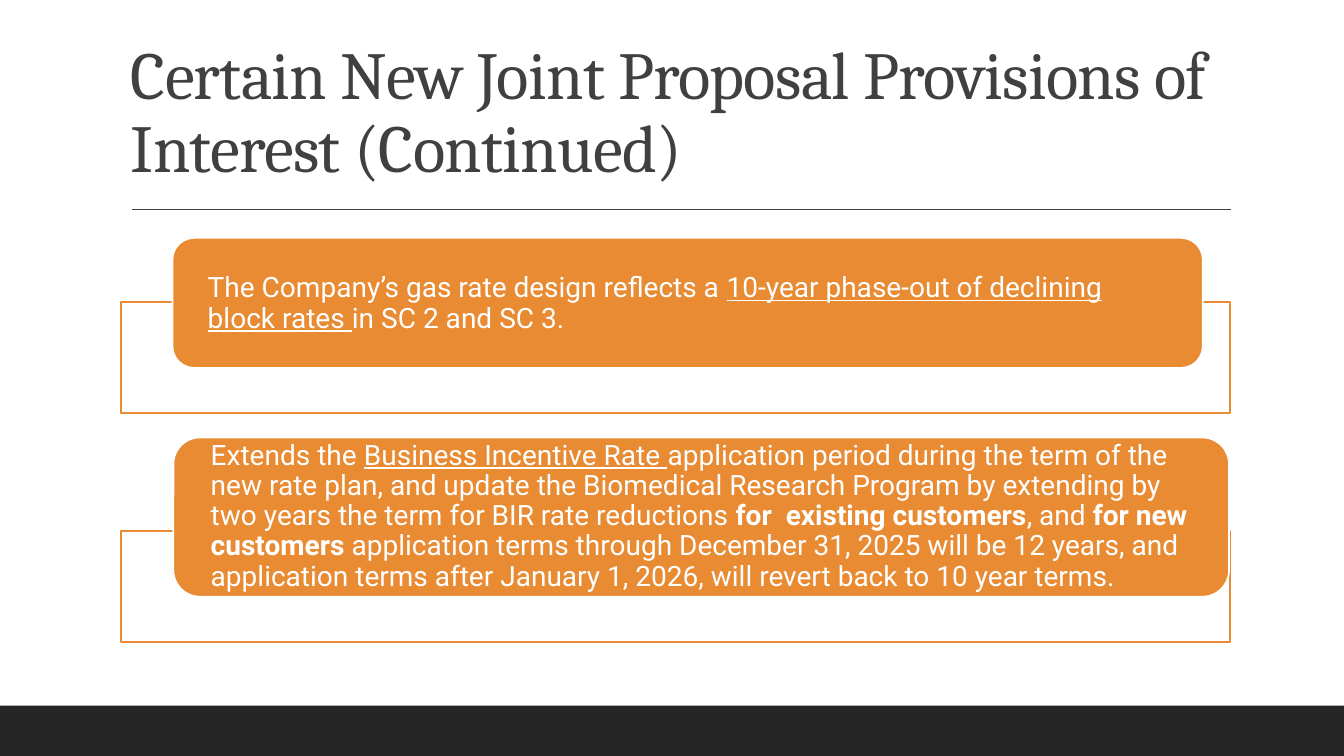
from dataclasses import dataclass

from lxml.etree import SubElement
from pptx import Presentation
from pptx.dml.color import RGBColor
from pptx.enum.shapes import MSO_CONNECTOR, MSO_SHAPE
from pptx.enum.text import MSO_ANCHOR
from pptx.oxml.ns import qn
from pptx.shapes.autoshape import Shape
from pptx.slide import Slide
from pptx.util import Inches, Pt

WHITE = RGBColor(0xFF, 0xFF, 0xFF)
ORANGE = RGBColor(0xE8, 0x8B, 0x33)
GRAY = RGBColor(0x40, 0x40, 0x40)
CHARCOAL = RGBColor(0x26, 0x26, 0x26)
TITLE_FONT = "Cambria"
BODY_FONT = "Roboto"
FRAME_LEFT, FRAME_WIDTH, FRAME_HEIGHT = 1.2, 11, 1.1


@dataclass(frozen=True)
class Box:
    left: float
    top: float
    width: float
    height: float

    def lengths(self) -> tuple[Inches, ...]:
        return tuple(Inches(value) for value in (self.left, self.top, self.width, self.height))


@dataclass(frozen=True)
class Phrase:
    text: str
    underline: bool = False
    bold: bool = False


@dataclass(frozen=True)
class Provision:
    frame_top: float
    card: Box
    text_box: Box
    phrases: tuple[Phrase, ...]


PROVISIONS = (
    Provision(
        3, Box(1.71, 2.36, 10.22, 1.29), Box(1.77, 2.43, 10.09, 1.17),
        (
            Phrase("The Company’s gas rate design reflects a "),
            Phrase("10-year phase-out of declining block rates ", underline=True),
            Phrase("in SC 2 and SC 3."),
        ),
    ),
    Provision(
        5.27, Box(1.72, 4.34, 10.47, 1.58), Box(1.8, 4.41, 10.32, 1.43),
        (
            Phrase("Extends the "),
            Phrase("Business Incentive Rate ", underline=True),
            Phrase(
                "application period during the term of the new rate plan, and update the "
                "Biomedical Research Program by extending by two years the term for BIR "
                "rate reductions "
            ),
            Phrase("for  existing customers", bold=True),
            Phrase(", and "),
            Phrase("for new customers ", bold=True),
            Phrase(
                "application terms through December 31, 2025 will be 12 years, and "
                "application terms after January 1, 2026, will revert back to 10 year terms."
            ),
        ),
    ),
)


def add_block(slide: Slide, kind: MSO_SHAPE, box: Box, fill: RGBColor,
              line: RGBColor | None = None) -> Shape:
    shape = slide.shapes.add_shape(kind, *box.lengths())
    shape.shadow.inherit = False
    shape.fill.solid()
    shape.fill.fore_color.rgb = fill
    if line is None:
        shape.line.fill.background()
    else:
        shape.line.color.rgb = line
        shape.line.width = Pt(1.25)
    return shape


def add_text(slide: Slide, box: Box, phrases: tuple[Phrase, ...], font_name: str,
             size: float, color: RGBColor, anchor: MSO_ANCHOR) -> Shape:
    shape = slide.shapes.add_textbox(*box.lengths())
    frame = shape.text_frame
    frame.word_wrap = True
    frame.vertical_anchor = anchor
    paragraph = frame.paragraphs[0]
    paragraph.line_spacing = 0.9
    for phrase in phrases:
        run = paragraph.add_run()
        run.text = phrase.text
        run.font.name = font_name
        run.font.size = Pt(size)
        run.font.color.rgb = color
        run.font.underline = phrase.underline
        run.font.bold = phrase.bold
    return shape


def add_title(slide: Slide) -> None:
    title = add_text(
        slide, Box(1.2, 0.31, 11, 1.59),
        (Phrase("Certain New Joint Proposal Provisions of Interest (Continued)"),),
        TITLE_FONT, 48, GRAY, MSO_ANCHOR.BOTTOM,
    )
    for run in title.text_frame.paragraphs[0].runs:
        run.font._element.set("spc", "-50")


def add_rule(slide: Slide) -> None:
    rule = slide.shapes.add_connector(
        MSO_CONNECTOR.STRAIGHT, Inches(1.31), Inches(2.08), Inches(12.21), Inches(2.08)
    )
    rule.line.color.rgb = GRAY
    rule.line.width = Pt(1)
    SubElement(rule._element.spPr, qn("a:effectLst"))


def add_provision(slide: Slide, provision: Provision) -> None:
    frame_box = Box(FRAME_LEFT, provision.frame_top, FRAME_WIDTH, FRAME_HEIGHT)
    frame = add_block(slide, MSO_SHAPE.RECTANGLE, frame_box, WHITE, ORANGE)
    fill_color = frame._element.spPr.find(f"{qn('a:solidFill')}/{qn('a:srgbClr')}")
    SubElement(fill_color, qn("a:alpha"), val="90000")
    add_block(slide, MSO_SHAPE.ROUNDED_RECTANGLE, provision.card, ORANGE, WHITE)
    text = add_text(slide, provision.text_box, provision.phrases,
                    BODY_FONT, 20, WHITE, MSO_ANCHOR.MIDDLE)
    text.text_frame.margin_left = text.text_frame.margin_right = Inches(0.29)
    text.text_frame.margin_top = text.text_frame.margin_bottom = Inches(0)


def main() -> None:
    presentation = Presentation()
    presentation.slide_width = Inches(13.33)
    presentation.slide_height = Inches(7.5)
    slide = presentation.slides.add_slide(presentation.slide_layouts[6])
    add_block(slide, MSO_SHAPE.RECTANGLE, Box(0, 7, 13.33, 0.5), CHARCOAL)
    add_rule(slide)
    add_title(slide)
    for provision in PROVISIONS:
        add_provision(slide, provision)
    presentation.save("out.pptx")


if __name__ == "__main__":
    main()
